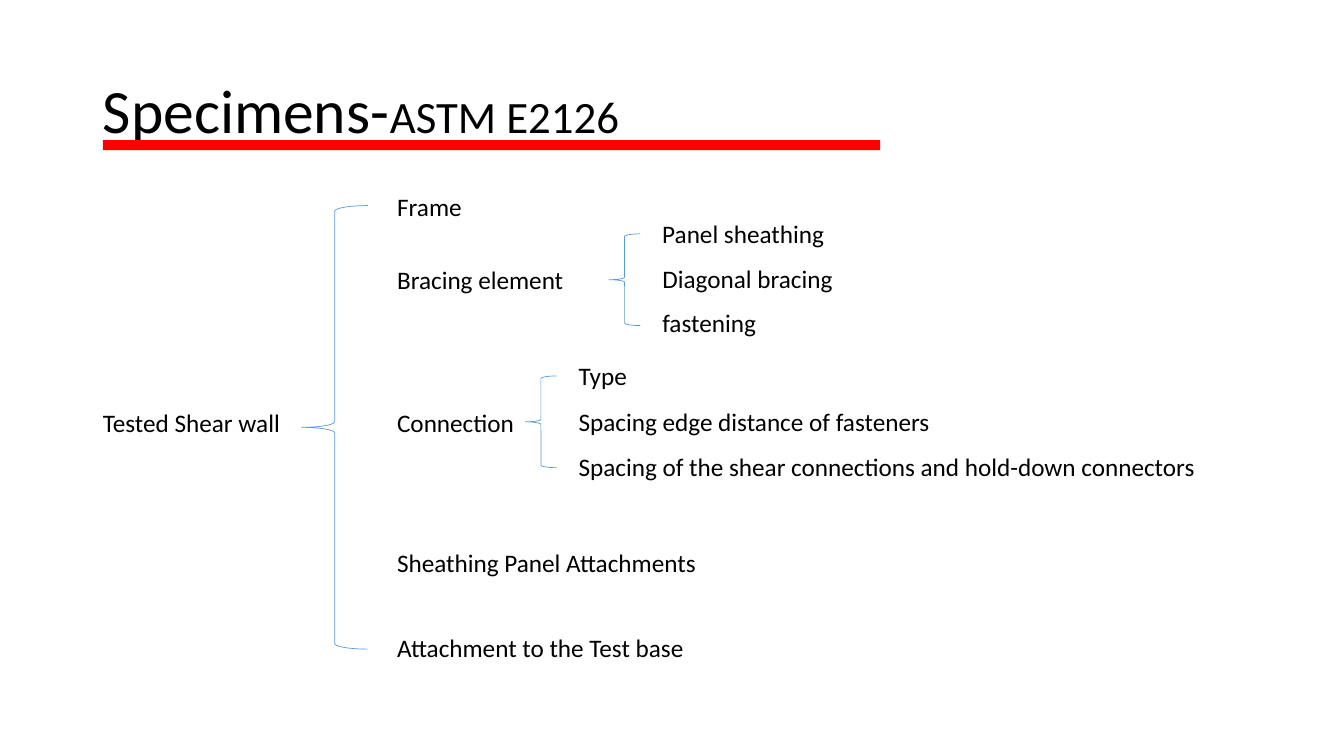
"""Build a slide that breaks a tested shear wall specimen into its parts."""
from dataclasses import dataclass

from lxml import etree
from pptx import Presentation
from pptx.dml.color import RGBColor
from pptx.enum.shapes import MSO_SHAPE
from pptx.enum.text import MSO_ANCHOR, MSO_AUTO_SIZE, PP_ALIGN
from pptx.oxml.ns import qn
from pptx.util import Emu, Pt

BRACE, BAR = MSO_SHAPE.LEFT_BRACE, MSO_SHAPE.RECTANGLE
TOP, MIDDLE = MSO_ANCHOR.TOP, MSO_ANCHOR.MIDDLE
LEFT, NO_FIT = PP_ALIGN.LEFT, MSO_AUTO_SIZE.NONE


@dataclass(frozen=True)
class Theme:
    font: str = "Calibri"
    ink: RGBColor = RGBColor(0, 0, 0)
    brace: RGBColor = RGBColor(0x5B, 0x9B, 0xD5)
    accent: RGBColor = RGBColor(0xFF, 0, 0)
    title: int = 44
    subtitle: int = 32
    body: int = 18
    brace_line: float = 0.5


THEME = Theme()

HEADING = [("Specimens-", THEME.title), ("ASTM E2126", THEME.subtitle)]
ROOT = "Tested Shear wall"
PARTS = [
    ("Frame", 185, 102),
    ("Bracing element", 257, 236),
    ("Connection", 399, 236),
    ("Sheathing Panel Attachments", 538, 396),
    ("Attachment to the Test base", 622, 396),
]
DETAILS = [
    (647, 212, 44, [("Panel sheathing", 236), ("Diagonal bracing", 221),
                    ("fastening", 221)]),
    (564, 353, 45, [("Type", 445), ("Spacing edge distance of fasteners", 491),
                    ("Spacing of the shear connections and hold-down connectors",
                     637)]),
]

PX = 9144
SLIDE_SIZE = (1333, 750)
TITLE_BOX = (92, 40, 1150, 145)
ROOT_BOX = (92, 402, 207, 52)
UNDERLINE_BOX = (102, 139, 771, 10)
ROOT_BRACE_BOX = (299, 204, 66, 440)
PART_LEFT, LABEL_HEIGHT = 384, 40
BRACE_WIDTH, BRACE_HEIGHT = 31, 91
BRACE_DX, BRACE_DY = -43, 20


def emu(box):
    return [Emu(length * PX) for length in box]


def place(placeholder, box):
    (placeholder.left, placeholder.top,
     placeholder.width, placeholder.height) = emu(box)


def write(shape, runs, *, anchor=TOP, wrap=True, line_spacing=None):
    frame = shape.text_frame
    frame.word_wrap = wrap
    frame.auto_size = NO_FIT
    frame.vertical_anchor = anchor
    paragraph = frame.paragraphs[0]
    paragraph.alignment = LEFT
    paragraph.line_spacing = line_spacing
    for text, size in runs:
        run = paragraph.add_run()
        run.text = text
        run.font.name = THEME.font
        run.font.size = Pt(size)
        run.font.color.rgb = THEME.ink
    return paragraph


def add_label(slide, text, left, top, width):
    label = slide.shapes.add_textbox(*emu((left, top, width, LABEL_HEIGHT)))
    write(label, [(text, THEME.body)])


def add_brace(slide, box):
    brace = slide.shapes.add_shape(BRACE, *emu(box))
    brace.shadow.inherit = False
    brace.fill.background()
    brace.line.color.rgb = THEME.brace
    brace.line.width = Pt(THEME.brace_line)


def add_underline(slide):
    underline = slide.shapes.add_shape(BAR, *emu(UNDERLINE_BOX))
    underline.shadow.inherit = False
    underline.fill.solid()
    underline.fill.fore_color.rgb = THEME.accent
    underline.line.fill.background()


def add_root(placeholder):
    place(placeholder, ROOT_BOX)
    paragraph = write(placeholder, [(ROOT, THEME.body)], line_spacing=0.9)
    paragraph.space_before = Pt(10)
    properties = paragraph._p.get_or_add_pPr()
    properties.set("marL", "0")
    properties.set("indent", "0")
    etree.SubElement(properties, qn("a:buNone"))


def main():
    deck = Presentation()
    deck.slide_width, deck.slide_height = emu(SLIDE_SIZE)
    slide = deck.slides.add_slide(deck.slide_layouts[1])

    title = slide.shapes.title
    place(title, TITLE_BOX)
    write(title, HEADING, anchor=MIDDLE, line_spacing=0.9)
    add_root(slide.placeholders[1])

    add_brace(slide, ROOT_BRACE_BOX)
    for text, top, width in PARTS:
        add_label(slide, text, PART_LEFT, top, width)

    for left, first_top, pitch, items in DETAILS:
        add_brace(slide, (left + BRACE_DX, first_top + BRACE_DY,
                          BRACE_WIDTH, BRACE_HEIGHT))
        for row, (text, width) in enumerate(items):
            add_label(slide, text, left, first_top + row * pitch, width)

    add_underline(slide)
    deck.save("out.pptx")


if __name__ == "__main__":
    main()
